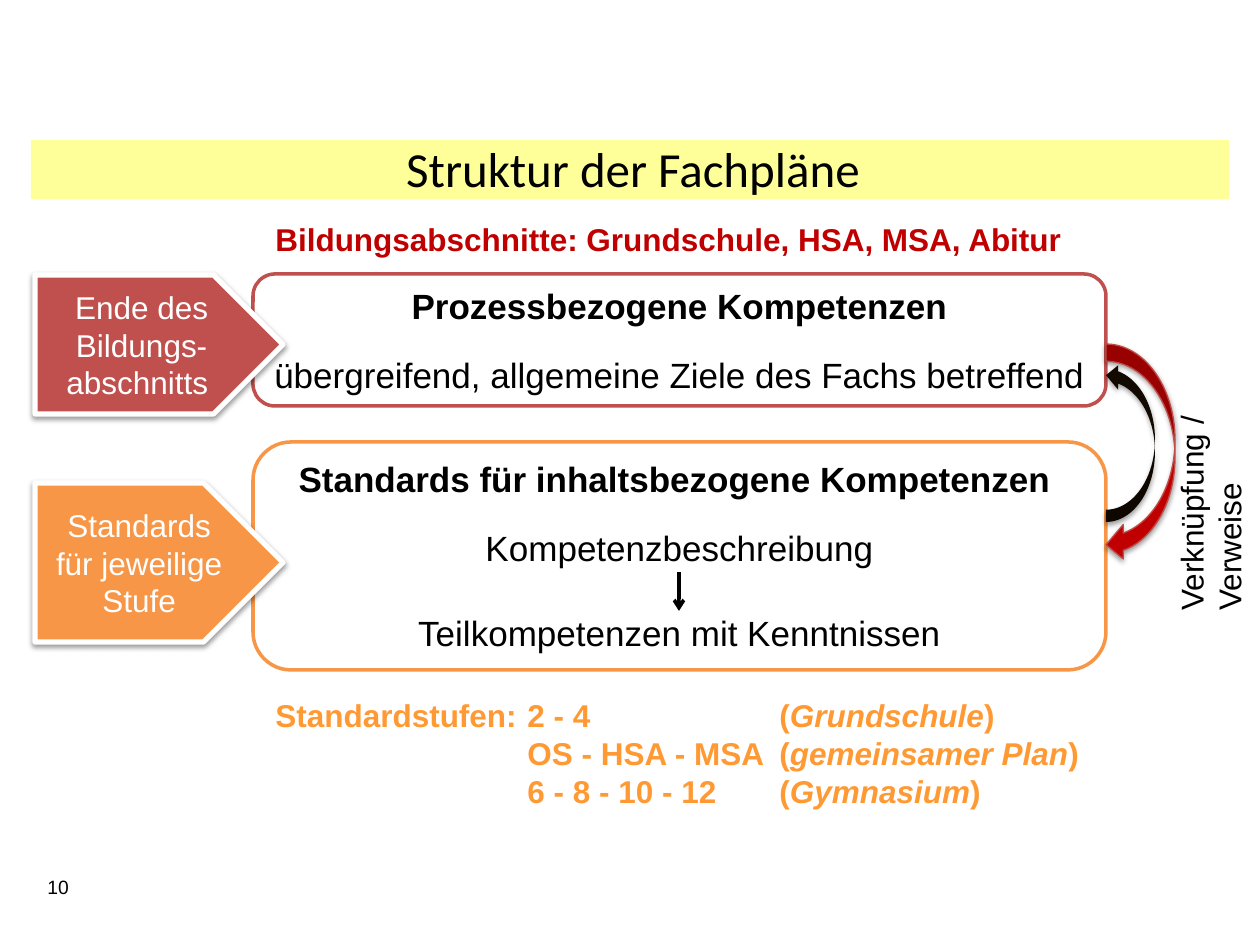
from lxml.etree import SubElement
from pptx import Presentation
from pptx.dml.color import RGBColor
from pptx.enum.shapes import MSO_CONNECTOR as Connector, MSO_SHAPE as Shape
from pptx.enum.text import MSO_ANCHOR as Anchor, PP_ALIGN as Align
from pptx.oxml.ns import qn
from pptx.util import Emu, Pt

EMU_PER_PX = 914400 / 126
BLACK, WHITE = "000000", "FFFFFF"
RED, DARK_RED = "C0504D", "C00000"
ORANGE, LIGHT_ORANGE = "F79646", "FF9933"


def px(length):
    return Emu(round(length * EMU_PER_PX))


def color(value):
    return RGBColor.from_string(value)


def add_run(paragraph, text, size, ink, bold=False, italic=False, font="Arial"):
    run = paragraph.add_run()
    run.text = text
    run.font.name = font
    run.font.size = Pt(size)
    run.font.bold = bold
    run.font.italic = italic
    run.font.color.rgb = color(ink)


def add_text(slide, box, text="", size=18, ink=BLACK, bold=False, font="Arial", align=Align.LEFT):
    frame = slide.shapes.add_textbox(*map(px, box)).text_frame
    frame.word_wrap = True
    if text:
        paragraph = frame.paragraphs[0]
        paragraph.alignment = align
        add_run(paragraph, text, size, ink, bold, font=font)
    return frame


def add_panel(slide, kind, box, fill, line=None, width=0):
    shape = slide.shapes.add_shape(kind, *map(px, box))
    shape.shadow.inherit = False
    shape.fill.solid()
    shape.fill.fore_color.rgb = color(fill)
    if line:
        shape.line.color.rgb = color(line)
        shape.line.width = Pt(width)
    else:
        shape.line.fill.background()
    return shape


def add_shadow(shape):
    effects = shape.element.spPr.find(qn("a:effectLst"))
    shadow = SubElement(effects, qn("a:outerShdw"), blurRad=str(Pt(3.1)), dist=str(Pt(1.6)),
                        dir="5400000", rotWithShape="0")
    tint = SubElement(shadow, qn("a:srgbClr"), val=BLACK)
    SubElement(tint, qn("a:alpha"), val="38000")


def add_competence_box(slide, box, line, rows):
    shape = add_panel(slide, Shape.ROUNDED_RECTANGLE, box, WHITE, line, 2)
    frame = shape.text_frame
    frame.word_wrap = True
    frame.vertical_anchor = Anchor.MIDDLE
    frame.margin_left = frame.margin_right = px(8)
    frame.margin_top = frame.margin_bottom = px(6)
    for index, (text, gap) in enumerate(rows):
        paragraph = frame.add_paragraph() if index else frame.paragraphs[0]
        paragraph.alignment = Align.CENTER
        paragraph.space_before = Pt(gap)
        add_run(paragraph, text, 20, BLACK, bold=index == 0)


def add_pentagon(slide, box, fill, text):
    shape = add_panel(slide, Shape.PENTAGON, box, fill, WHITE, 3)
    add_shadow(shape)
    frame = shape.text_frame
    frame.word_wrap = True
    frame.vertical_anchor = Anchor.MIDDLE
    paragraph = frame.paragraphs[0]
    paragraph.alignment = Align.CENTER
    add_run(paragraph, text, 18, WHITE)


def add_curved_arrow(slide, box, fill, line=None, upward=False):
    shape = add_panel(slide, Shape.CURVED_LEFT_ARROW, box, fill, line, 0.75)
    add_shadow(shape)
    if upward:
        shape.element.spPr.find(qn("a:xfrm")).set("flipV", "1")


def add_down_arrow(slide, x, top, bottom):
    connector = slide.shapes.add_connector(Connector.STRAIGHT, px(x), px(top), px(x), px(bottom))
    connector.line.color.rgb = color(BLACK)
    connector.line.width = Pt(2)
    SubElement(connector.line._get_or_add_ln(), qn("a:tailEnd"), type="arrow")
    SubElement(connector.element.spPr, qn("a:effectLst"))


def add_levels(slide, box, rows):
    frame = add_text(slide, box)
    for index, (label, levels, school) in enumerate(rows):
        paragraph = frame.add_paragraph() if index else frame.paragraphs[0]
        tabs = SubElement(paragraph._p.get_or_add_pPr(), qn("a:tabLst"))
        for stop in (252, 504):
            SubElement(tabs, qn("a:tab"), pos=str(px(stop)), algn="l")
        for text, italic in ((f"{label}\t{levels}\t(", False), (school, True), (")", False)):
            add_run(paragraph, text, 18, LIGHT_ORANGE, bold=True, italic=italic)


def main():
    presentation = Presentation()
    presentation.slide_width = px(1260)
    presentation.slide_height = px(945)
    slide = presentation.slides.add_slide(presentation.slide_layouts[6])

    add_panel(slide, Shape.RECTANGLE, (31, 140, 1198, 59), "FFFF99")
    add_text(slide, (34, 132, 1198, 72), "Struktur der Fachpläne", 28,
             font="Calibri", align=Align.CENTER)
    add_text(slide, (35, 869, 69, 37), "10", 11)

    add_competence_box(slide, (253, 274, 853, 132), RED, [
        ("Prozessbezogene Kompetenzen", 0),
        ("übergreifend, allgemeine Ziele des Fachs betreffend", 15),
    ])
    add_competence_box(slide, (253, 442, 853, 228), ORANGE, [
        ("Standards für inhaltsbezogene Kompetenzen ", 0),
        ("Kompetenzbeschreibung", 15),
        ("Teilkompetenzen mit Kenntnissen", 25),
    ])

    add_text(slide, (263, 214, 829, 50), "Bildungsabschnitte: Grundschule, HSA, MSA, Abitur",
             ink=DARK_RED, bold=True)
    add_levels(slide, (263, 690, 990, 127), [
        ("Standardstufen:", "2 - 4", "Grundschule"),
        ("", "OS - HSA - MSA", "gemeinsamer Plan"),
        ("", "6 - 8 - 10 - 12", "Gymnasium"),
    ])

    add_pentagon(slide, (35, 275, 248, 139), RED, "Ende des Bildungs-abschnitts ")
    add_pentagon(slide, (35, 483, 248, 159), ORANGE, "Standards für jeweilige Stufe")

    add_curved_arrow(slide, (1106, 344, 69, 218), DARK_RED, "BF4C48")
    add_curved_arrow(slide, (1106, 363, 49, 159), "120900", upward=True)
    link_label = add_text(slide, (1166, 275, 63, 348), "Verknüpfung / Verweise")
    link_label._txBody.bodyPr.set("vert", "vert270")
    add_down_arrow(slide, 679, 572, 611)

    presentation.save("out.pptx")


if __name__ == "__main__":
    main()
